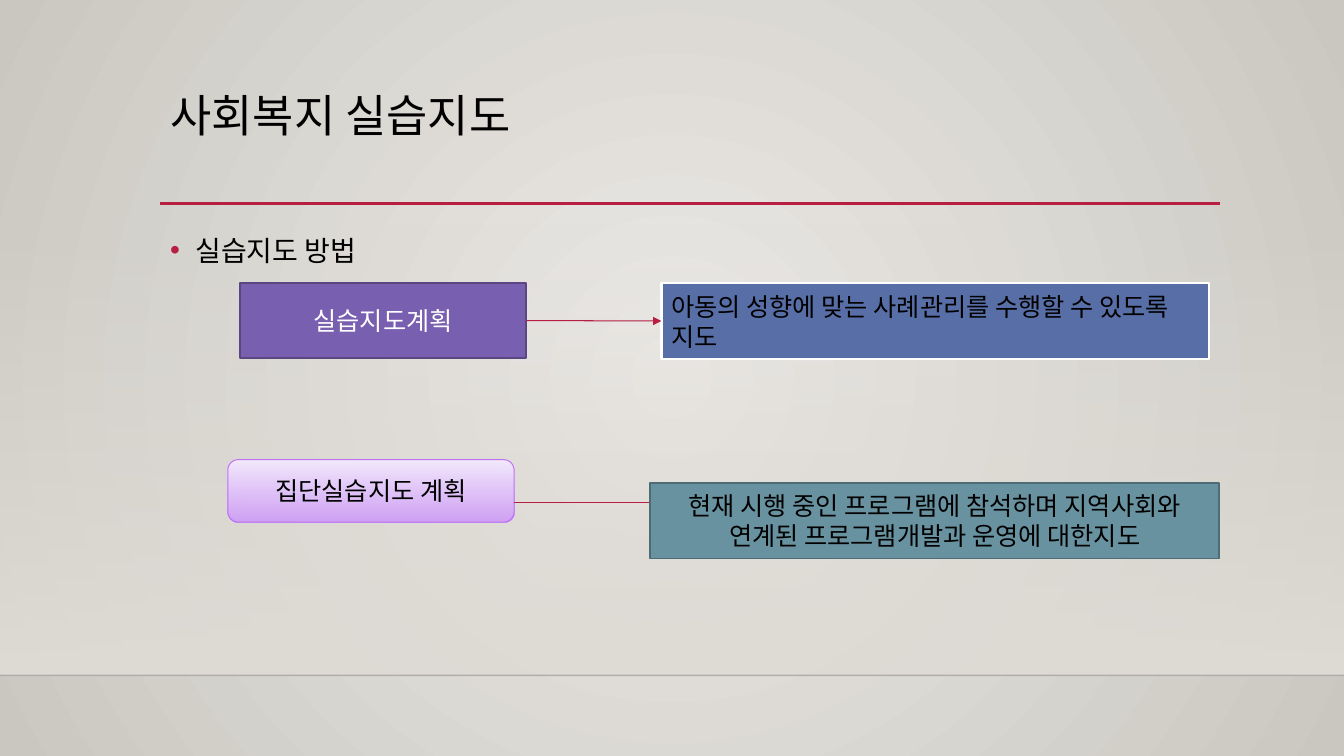
from lxml import etree
from pptx import Presentation
from pptx.dml.color import RGBColor
from pptx.enum.shapes import MSO_CONNECTOR, MSO_SHAPE
from pptx.enum.text import MSO_ANCHOR, MSO_AUTO_SIZE, PP_ALIGN
from pptx.oxml.ns import qn
from pptx.util import Inches, Pt

STRAIGHT = MSO_CONNECTOR.STRAIGHT
RECTANGLE, ROUNDED = MSO_SHAPE.RECTANGLE, MSO_SHAPE.ROUNDED_RECTANGLE
TOP, MIDDLE = MSO_ANCHOR.TOP, MSO_ANCHOR.MIDDLE
LEFT, CENTER = PP_ALIGN.LEFT, PP_ALIGN.CENTER
NO_FIT = MSO_AUTO_SIZE.NONE

FONT = "Calibri"
COLORS = {
    "text": "000000", "white": "FFFFFF", "accent": "B71E42",
    "center": "ECEAE7", "edge": "CAC7C1", "band": "DFDBD5", "floor": "000001",
    "purple": "795FAF", "purple_line": "5A4681",
    "lilac_light": "F4EAFD", "lilac": "CE9CF7", "lilac_line": "BC72F0",
    "blue": "586EA6", "teal": "6892A0", "teal_line": "4D6C76",
}


class SlideBuilder:
    def __init__(self, deck):
        self.page = deck.slides.add_slide(deck.slide_layouts[5])

    def color(self, name):
        return RGBColor.from_string(COLORS[name])

    def set_alpha(self, parent, percent):
        color = next(parent.iter(qn("a:srgbClr")))
        etree.SubElement(color, qn("a:alpha"), val=str(percent * 1000))

    def gradient(self, fill, names, alphas=(100, 100)):
        fill.gradient()
        fill.gradient_angle = 270
        for stop, name, alpha in zip(fill.gradient_stops, names, alphas):
            stop.color.rgb = self.color(name)
            if alpha < 100:
                self.set_alpha(stop._gs, alpha)

    def background(self, center, edge):
        self.gradient(self.page.background.fill, (center, edge))
        linear = next(self.page.element.iter(qn("a:lin")))
        circle = etree.Element(qn("a:path"), {"path": "circle"})
        sides = dict.fromkeys("ltrb", "50000")
        etree.SubElement(circle, qn("a:fillToRect"), sides)
        linear.getparent().replace(linear, circle)

    def set_text(self, frame, text, size, color="text", align=LEFT, anchor=MIDDLE):
        frame.word_wrap = True
        frame.auto_size = NO_FIT
        frame.vertical_anchor = anchor
        frame.text = text
        para = frame.paragraphs[0]
        para.alignment = align
        font = para.runs[0].font
        font.name, font.size = FONT, Pt(size)
        font.color.rgb = self.color(color)
        return para

    def title(self, text, left, top, width, height):
        box = self.page.shapes.title
        box.left, box.top = Inches(left), Inches(top)
        box.width, box.height = Inches(width), Inches(height)
        self.set_text(box.text_frame, text, 32, anchor=TOP).line_spacing = 0.9

    def bullet(self, text, left, top, width, height):
        box = self.page.shapes.add_textbox(
            Inches(left), Inches(top), Inches(width), Inches(height))
        para = self.set_text(box.text_frame, text, 20, anchor=TOP)
        para.line_spacing = 1.2
        properties = para._p.get_or_add_pPr()
        properties.set("marL", str(Inches(0.25)))
        properties.set("indent", str(Inches(-0.25)))
        mark_color = etree.SubElement(properties, qn("a:buClr"))
        etree.SubElement(mark_color, qn("a:srgbClr"), val=COLORS["accent"])
        etree.SubElement(properties, qn("a:buFont"), typeface="Arial")
        etree.SubElement(properties, qn("a:buChar"), char="•")

    def box(self, left, top, width, height, fill, outline=None, weight=1.25,
            text="", text_color="text", align=CENTER, kind=RECTANGLE,
            alphas=(100, 100)):
        shape = self.page.shapes.add_shape(
            kind, Inches(left), Inches(top), Inches(width), Inches(height))
        shape.shadow.inherit = False
        if isinstance(fill, tuple):
            self.gradient(shape.fill, fill, alphas)
        else:
            shape.fill.solid()
            shape.fill.fore_color.rgb = self.color(fill)
        if outline:
            shape.line.color.rgb = self.color(outline)
            shape.line.width = Pt(weight)
        else:
            shape.line.fill.background()
        if text:
            self.set_text(shape.text_frame, text, 18, text_color, align)
        return shape

    def line(self, start, end, color="accent", weight=0.75, arrow=False, alpha=100):
        connector = self.page.shapes.add_connector(
            STRAIGHT, *(Inches(value) for value in (*start, *end)))
        connector.line.color.rgb = self.color(color)
        connector.line.width = Pt(weight)
        outline = connector.line._get_or_add_ln()
        if alpha < 100:
            self.set_alpha(outline, alpha)
        if arrow:
            etree.SubElement(outline, qn("a:tailEnd"), type="triangle")
        etree.SubElement(connector._element.spPr, qn("a:effectLst"))
        return connector


def main():
    deck = Presentation()
    deck.slide_width, deck.slide_height = Inches(13.33), Inches(7.5)
    slide = SlideBuilder(deck)

    slide.background("center", "edge")
    slide.box(0, 2.21, 13.33, 4.49, ("band", "band"), alphas=(0, 100))
    slide.line((0, 6.7), (13.33, 6.7), "floor", 1, alpha=20)
    slide.line((1.59, 2.02), (12.1, 2.02), weight=2.5)
    slide.title("사회복지 실습지도", 1.59, 0.88, 10.5, 1.15)
    slide.bullet("실습지도 방법", 1.59, 2.2, 10.5, 3.77)

    plan = slide.box(2.38, 2.81, 2.84, 0.74, "purple", "purple_line",
                     text="실습지도계획", text_color="white")
    guidance = slide.box(6.56, 2.81, 5.43, 0.75, "blue", "white", 1.75, align=LEFT,
                         text="아동의 성향에 맞는 사례관리를 수행할 수 있도록 지도")
    plan_arrow = slide.line((5.22, 3.18), (6.56, 3.16), arrow=True)
    plan_arrow.begin_connect(plan, 3)
    plan_arrow.end_connect(guidance, 1)

    slide.box(2.26, 4.56, 2.84, 0.62, ("lilac_light", "lilac"), "lilac_line", 0.75,
              text="집단실습지도 계획", kind=ROUNDED, alphas=(100, 92))
    slide.line((5.1, 4.99), (6.56, 4.99), arrow=True)
    slide.box(6.45, 4.79, 5.64, 0.75, "teal", "teal_line",
              text="현재 시행 중인 프로그램에 참석하며 지역사회와 연계된 프로그램개발과 운영에 대한지도")

    deck.save("out.pptx")


if __name__ == "__main__":
    main()
